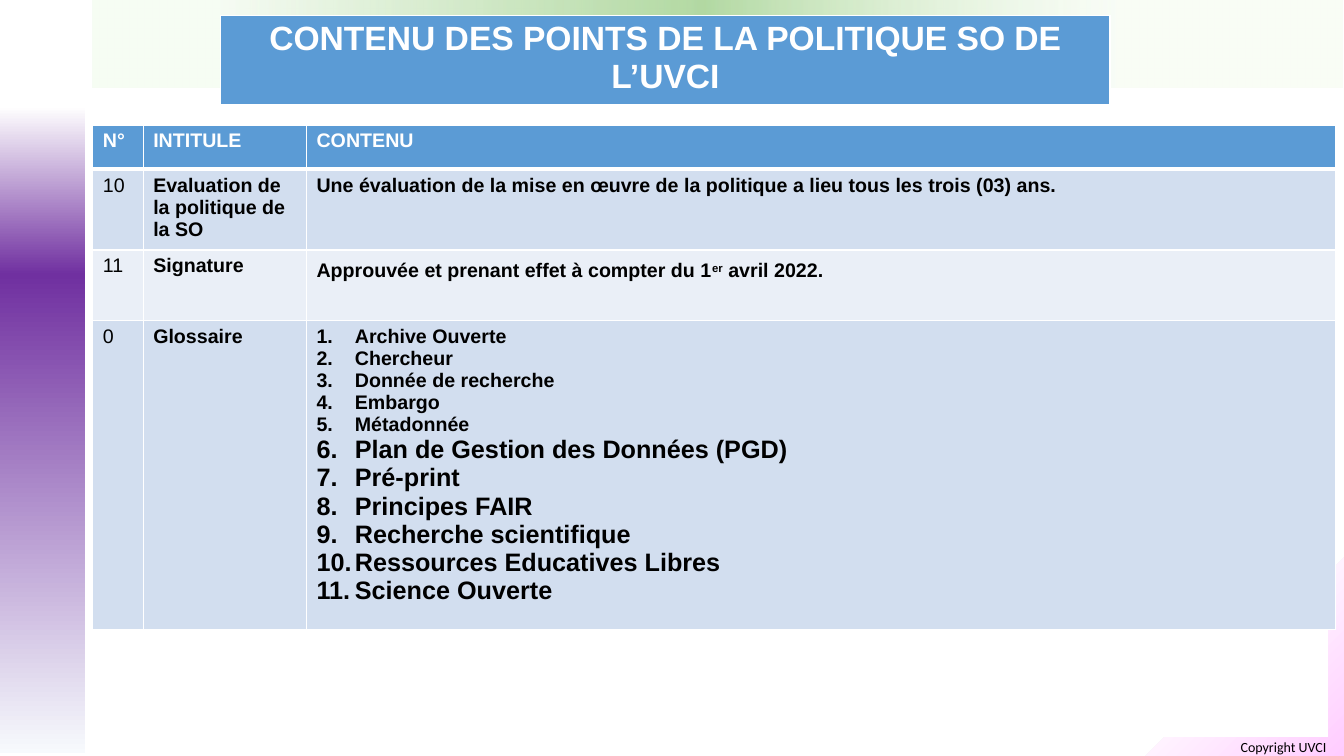
from lxml.etree import SubElement
from pptx import Presentation
from pptx.dml.color import RGBColor
from pptx.enum.shapes import MSO_SHAPE
from pptx.enum.text import MSO_ANCHOR, PP_ALIGN
from pptx.oxml import parse_xml
from pptx.oxml.ns import nsdecls, qn
from pptx.util import Inches, Pt

WHITE = RGBColor(0xFF, 0xFF, 0xFF)
BLACK = RGBColor(0, 0, 0)
BLUE = RGBColor(0x5B, 0x9B, 0xD5)
BANDS = [RGBColor(0xD2, 0xDE, 0xEF), RGBColor(0xEA, 0xEF, 0xF7)]

TITLE = "CONTENU DES POINTS DE LA POLITIQUE SO DE L’UVCI"
COPYRIGHT = "Copyright UVCI"
HEADER = ["N°", "INTITULE", "CONTENU"]
GLOSSARY = [
    ("Archive Ouverte", 14),
    ("Chercheur", 14),
    ("Donnée de recherche", 14),
    ("Embargo", 14),
    ("Métadonnée", 14),
    ("Plan de Gestion des Données (PGD) ", 18),
    ("Pré-print", 18),
    ("Principes FAIR", 18),
    ("Recherche scientifique", 18),
    ("Ressources Educatives Libres", 18),
    ("Science Ouverte", 18),
]
EVALUATION = "Une évaluation de la mise en œuvre de la politique a lieu tous les trois (03) ans."
APPROVAL = [
    ("Approuvée et prenant effet à compter du 1", 14, 0),
    ("er", 14, 30),
    (" avril 2022.", 14, 0),
    (" ", 18, 0),
]
ROWS = [
    ("10", "Evaluation de la politique de la SO", [[(EVALUATION, 14, 0)]]),
    ("11", "Signature", [APPROVAL]),
    ("0", "Glossaire", [[(term, size, 0)] for term, size in GLOSSARY]),
]
COL_WIDTHS = [0.5, 1.62, 10.21]
ROW_HEIGHTS = [0.44, 0.79, 0.7, 3.06]

LINEAR = '<a:lin ang="10800000" scaled="0"/>'
RADIAL = '<a:path path="circle"><a:fillToRect l="100000" t="100000"/></a:path>'
DECOR = [
    dict(kind=MSO_SHAPE.HALF_FRAME, at=(11.36, 5.53, 1.97, 1.97), rotation=180,
         adjust=(0.095, 0.079), shade=RADIAL,
         stops=[(0, "FFCCFF", 100), (66, "FFFFFF", 100), (100, "385723", 100)]),
    dict(kind=MSO_SHAPE.RECTANGLE, at=(-2.79, 3.84, 6.42, 0.85), rotation=90,
         adjust=(), shade=LINEAR,
         stops=[(0, "F7FAFD", 100), (74, "7030A0", 100), (100, "FFFFFF", 100)]),
    dict(kind=MSO_SHAPE.RECTANGLE, at=(0.92, 0, 12.4, 0.87), rotation=0,
         adjust=(), shade=LINEAR,
         stops=[(18, "D9F3C9", 16), (51, "78BC5C", 56), (90, "F2FBEE", 61)]),
]


def add_run(p, text, color, **font):
    """Add a run to a paragraph, Arial unless the format says otherwise."""
    r = p.add_run()
    r.text = text
    r.font.color.rgb = color
    for name, value in {"name": "Arial", **font}.items():
        setattr(r.font, name, value)
    return r


def add_decor(slide, kind, at, rotation, adjust, shade, stops):
    """Add a borderless shape with a gradient fill."""
    sp = slide.shapes.add_shape(kind, *map(Inches, at))
    sp.rotation = rotation
    sp.shadow.inherit = False
    sp.line.fill.background()
    for i, value in enumerate(adjust):
        sp.adjustments[i] = value
    marks = "".join(
        f'<a:gs pos="{pos * 1000}"><a:srgbClr val="{color}">'
        f'<a:alpha val="{alpha * 1000}"/></a:srgbClr></a:gs>'
        for pos, color, alpha in stops)
    grad = parse_xml(f'<a:gradFill {nsdecls("a")} rotWithShape="1">'
                     f'<a:gsLst>{marks}</a:gsLst>{shade}</a:gradFill>')
    sp.element.spPr.find(qn("a:prstGeom")).addnext(grad)


def add_copyright(slide):
    """Add the copyright line in the bottom right corner."""
    tf = slide.shapes.add_textbox(*map(Inches, (12.15, 7.28, 1.16, 0.27))).text_frame
    tf.word_wrap = True
    tf.vertical_anchor = MSO_ANCHOR.MIDDLE
    p = tf.paragraphs[0]
    p.alignment = PP_ALIGN.CENTER
    add_run(p, COPYRIGHT, BLACK, name="Calibri", size=Pt(10))


def add_grid(slide, left, top, widths, heights):
    """Add a table with the given column widths and row heights."""
    table = slide.shapes.add_table(
        len(heights), len(widths), Inches(left), Inches(top),
        Inches(sum(widths)), Inches(sum(heights))).table
    for col, width in zip(table.columns, widths):
        col.width = Inches(width)
    for row, height in zip(table.rows, heights):
        row.height = Inches(height)
    return table


def set_borders(cell, top, bottom):
    """Draw white cell borders, one point wide at the sides."""
    tcPr = cell._tc.get_or_add_tcPr()
    sides = {"lnL": 1, "lnR": 1, "lnT": top, "lnB": bottom}
    for i, (side, width) in enumerate(sides.items()):
        tcPr.insert(i, parse_xml(
            f'<a:{side} {nsdecls("a")} w="{Pt(width)}"><a:solidFill>'
            f'<a:srgbClr val="{WHITE}"/></a:solidFill></a:{side}>'))


def fill_cell(cell, paragraphs, fill, color, bold, top=1, bottom=1):
    """Fill a cell, numbering its paragraphs when there are several."""
    cell.fill.solid()
    cell.fill.fore_color.rgb = fill
    set_borders(cell, top, bottom)
    tf = cell.text_frame
    for i, runs in enumerate(paragraphs):
        p = tf.add_paragraph() if i else tf.paragraphs[0]
        if len(paragraphs) > 1:
            pPr = p._p.get_or_add_pPr()
            pPr.set("marL", str(Inches(0.38)))
            pPr.set("indent", str(-Inches(0.38)))
            SubElement(pPr, qn("a:buFont"), typeface="+mj-lt")
            SubElement(pPr, qn("a:buAutoNum"), type="arabicPeriod")
        for text, size, raised in runs:
            r = add_run(p, text, color, size=Pt(size), bold=bold)
            if raised:
                r._r.get_or_add_rPr().set("baseline", str(raised * 1000))


def add_policy_table(slide):
    """Add the table of policy points."""
    table = add_grid(slide, 0.92, 1.24, COL_WIDTHS, ROW_HEIGHTS)
    for c, text in enumerate(HEADER):
        fill_cell(table.cell(0, c), [[(text, 14, 0)]], BLUE, WHITE, True, bottom=3)
    for i, (number, heading, content) in enumerate(ROWS):
        cells = [[[(number, 14, 0)]], [[(heading, 14, 0)]], content]
        for c, paragraphs in enumerate(cells):
            fill_cell(table.cell(i + 1, c), paragraphs, BANDS[i % 2], BLACK, c > 0,
                      top=1 if i else 3)


def add_title_table(slide):
    """Add the one-cell table that carries the title."""
    cell = add_grid(slide, 2.19, 0.15, [8.82], [0.88]).cell(0, 0)
    fill_cell(cell, [[(TITLE, 24, 0)]], BLUE, WHITE, True, bottom=3)
    cell.text_frame.paragraphs[0].alignment = PP_ALIGN.CENTER


def main():
    """Build the slide and save it."""
    prs = Presentation()
    prs.slide_width, prs.slide_height = Inches(13.33), Inches(7.5)
    slide = prs.slides.add_slide(prs.slide_layouts[6])
    for decor in DECOR:
        add_decor(slide, **decor)
    add_copyright(slide)
    add_policy_table(slide)
    add_title_table(slide)
    prs.save("out.pptx")


if __name__ == "__main__":
    main()
